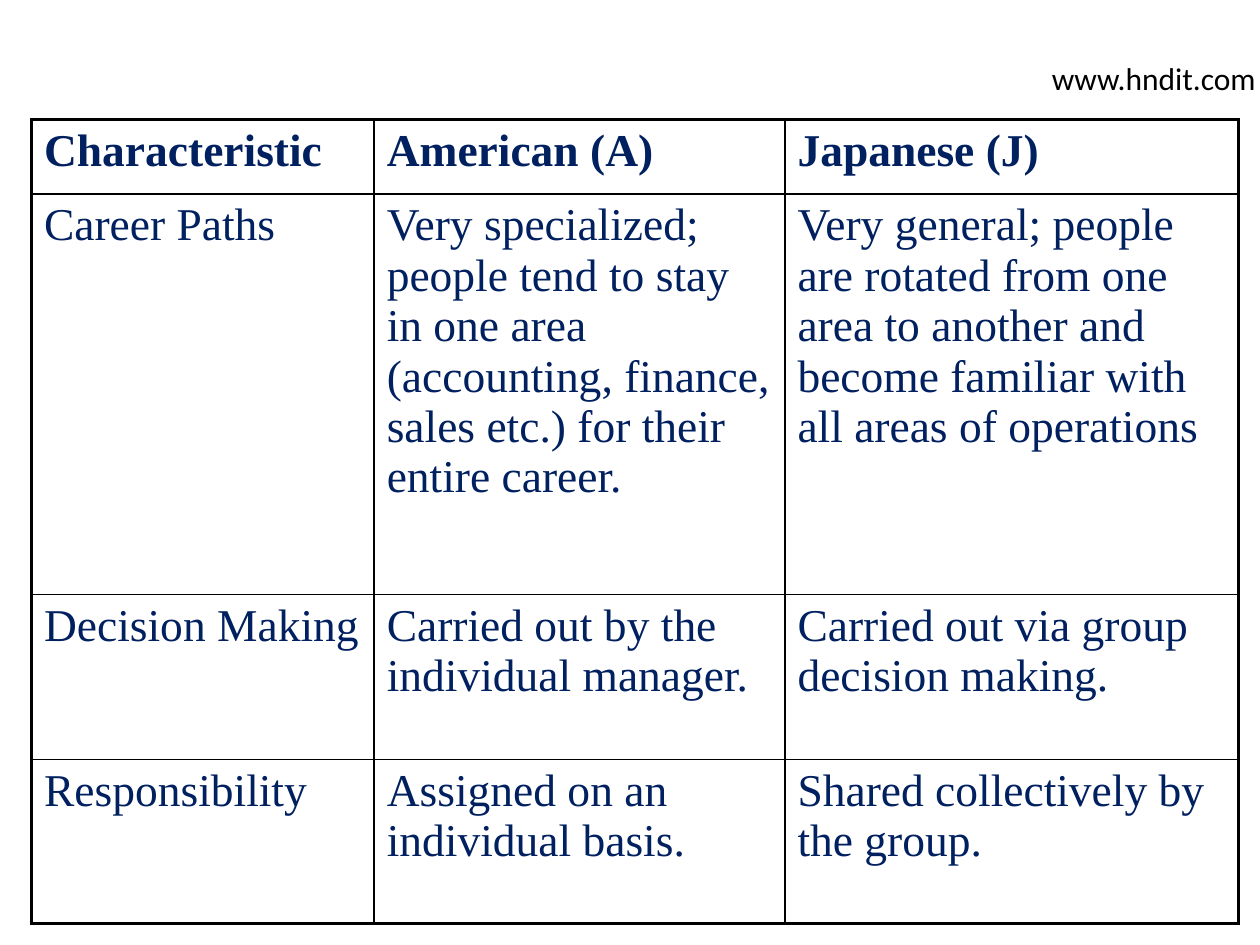
import pptx
import pptx.dml.color
import pptx.oxml
import pptx.oxml.ns
import pptx.util

Inches = pptx.util.Inches
Pt = pptx.util.Pt


def rgb(value):
    return pptx.dml.color.RGBColor.from_string(value)


def set_border(cell, index, side, width):
    ln = pptx.oxml.parse_xml(
        f'<a:{side} {pptx.oxml.ns.nsdecls("a")} w="{Pt(width)}">'
        '<a:solidFill><a:srgbClr val="000000"/></a:solidFill>'
        f'</a:{side}>'
    )
    cell._tc.get_or_add_tcPr().insert(index, ln)


prs = pptx.Presentation()
prs.slide_width = Inches(10)
prs.slide_height = Inches(7.5)
s = prs.slides.add_slide(prs.slide_layouts[6])

rows = [
    ["Characteristic", "American (A)", "Japanese (J)"],
    [
        "Career Paths",
        "Very specialized; people tend to stay in one area "
        "(accounting, finance, sales etc.) for their entire career.",
        "Very general; people are rotated from one area to another "
        "and become familiar with all areas of operations",
    ],
    [
        "Decision Making",
        "Carried out by the individual manager.",
        "Carried out via group decision making.",
    ],
    [
        "Responsibility",
        "Assigned on an individual basis.",
        "Shared collectively by the group.",
    ],
]
col_widths = [2.72, 3.26, 3.6]
row_heights = [0.59, 3.18, 1.31, 1.3]
cell_format = {"name": "Times New Roman", "size": Pt(26)}

table = s.shapes.add_table(
    len(rows), len(col_widths), Inches(0.25), Inches(0.95),
    Inches(sum(col_widths)), Inches(sum(row_heights)),
).table
table.horz_banding = False
table.first_row = False
for col, width in zip(table.columns, col_widths):
    col.width = Inches(width)
for row, height in zip(table.rows, row_heights):
    row.height = Inches(height)

last_row, last_col = len(rows) - 1, len(col_widths) - 1
for i, texts in enumerate(rows):
    for j, text in enumerate(texts):
        cell = table.cell(i, j)
        cell.fill.background()
        p = cell.text_frame.paragraphs[0]
        r = p.add_run()
        r.text = text
        for key, value in cell_format.items():
            setattr(r.font, key, value)
        r.font.bold = i == 0
        r.font.color.rgb = rgb("002060")
        outer = {"lnL": j == 0, "lnR": j == last_col,
                 "lnT": i == 0, "lnB": i == last_row}
        for k, (side, is_outer) in enumerate(outer.items()):
            set_border(cell, k, side, 2.25 if is_outer else 1)

sp = s.shapes.add_textbox(Inches(8.25), Inches(0.42), Inches(1.92), Inches(0.4))
tf = sp.text_frame
tf.word_wrap = True
r = tf.paragraphs[0].add_run()
r.text = "www.hndit.com"
for key, value in {"name": "Calibri", "size": Pt(18)}.items():
    setattr(r.font, key, value)
r.font.color.rgb = rgb("000000")

prs.save("out.pptx")
